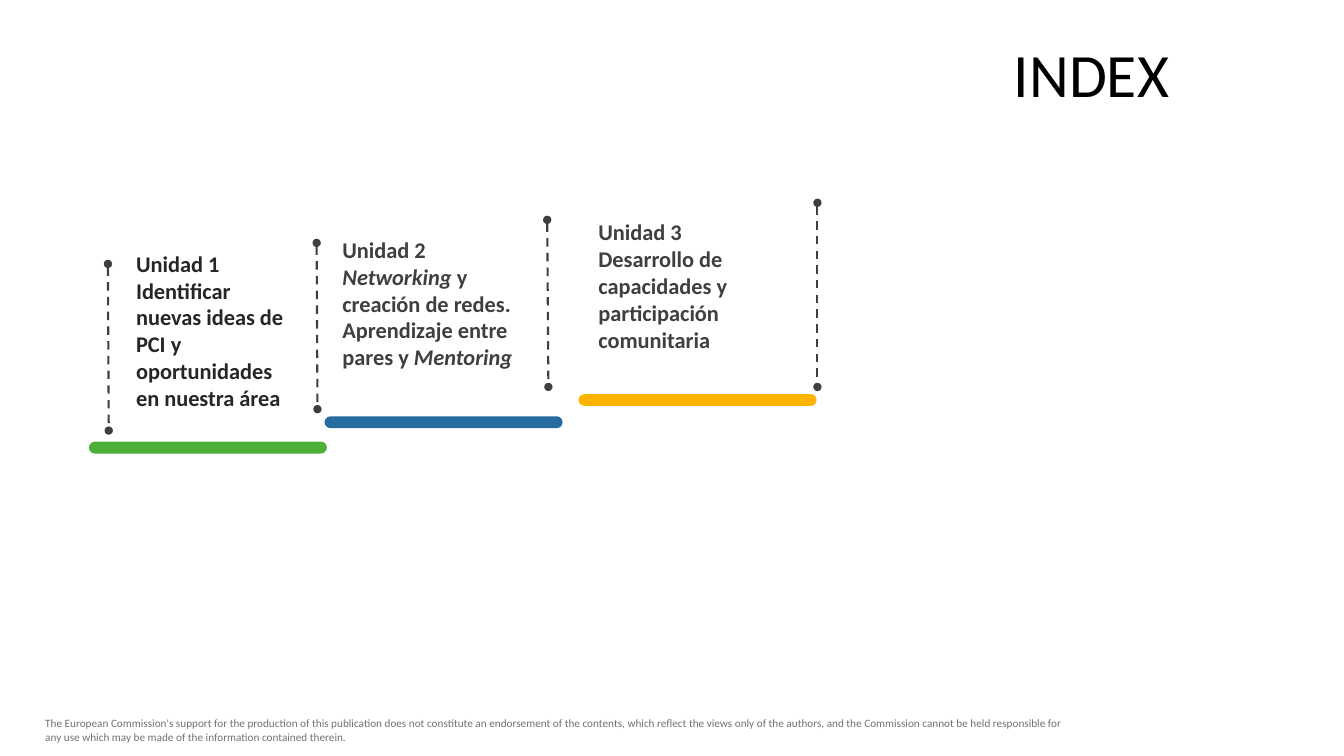
"""Builds the index slide with its three rising course units."""
from lxml.etree import SubElement
from pptx import Presentation
from pptx.dml.color import RGBColor
from pptx.enum.dml import MSO_LINE
from pptx.enum.shapes import MSO_CONNECTOR, MSO_SHAPE
from pptx.enum.text import MSO_ANCHOR, MSO_AUTO_SIZE, PP_ALIGN
from pptx.oxml.ns import qn
from pptx.util import Cm, Pt

BLACK = RGBColor(0x00, 0x00, 0x00)
INK = RGBColor(0x26, 0x26, 0x26)
CHARCOAL = RGBColor(0x3F, 0x3F, 0x3F)
GRAY = RGBColor(0x75, 0x70, 0x70)
GREEN = RGBColor(0x4E, 0xAE, 0x3A)
BLUE = RGBColor(0x26, 0x6C, 0x9F)
YELLOW = RGBColor(0xFF, 0xB5, 0x00)

DISCLAIMER = (
    "The European Commission's support for the production of this publication "
    "does not constitute an endorsement of the contents, which reflect the views "
    "only of the authors, and the Commission cannot be held responsible for any "
    "use which may be made of the information contained therein."
)

UNITS = [
    ("Unidad 1",
     [("Identificar nuevas ideas de PCI y oportunidades en nuestra área", False)],
     INK, (3.18, 6.17, 4.34, 4.37), 0.25, GREEN, (2.24, 11.13)),
    ("Unidad 2",
     [("Networking", True),
      (" y creación de redes. Aprendizaje entre pares y ", False),
      ("Mentoring", True)],
     CHARCOAL, (8.33, 5.82, 4.95, 3.68), 0.3, BLUE, (8.18, 10.49)),
    ("Unidad 3",
     [("Desarrollo de capacidades y participación comunitaria", False)],
     CHARCOAL, (14.78, 5.38, 5, 3.68), 0.3, YELLOW, (14.58, 9.93)),
]

DIVIDERS = [
    (2.72, 6.65, 2.74, 10.85),
    (7.98, 6.12, 8, 10.31),
    (13.79, 5.54, 13.82, 9.75),
    (20.6, 5.11, 20.6, 9.75),
]


class IndexSlide:
    """Holds the text style and the slide, and draws each kind of element."""

    font_name = "Calibri"

    def __init__(self, deck):
        self.slide = deck.slides.add_slide(deck.slide_layouts[5])
        self.shapes = self.slide.shapes

    def style(self, paragraph, size, color, bold=False):
        font = paragraph.font
        font.name, font.size, font.bold = self.font_name, Pt(size), bold
        font.color.rgb = color

    def title(self, text, box):
        heading = self.shapes.title
        heading.left, heading.top, heading.width, heading.height = map(Cm, box)
        frame = heading.text_frame
        frame.text = text
        frame.auto_size = MSO_AUTO_SIZE.NONE
        frame.vertical_anchor = MSO_ANCHOR.MIDDLE
        paragraph = frame.paragraphs[0]
        paragraph.alignment = PP_ALIGN.RIGHT
        paragraph.line_spacing = 0.9
        self.style(paragraph, 44, BLACK)

    def text(self, paragraphs, box, size, color, bold=False, inset=0.25):
        frame = self.shapes.add_textbox(*map(Cm, box)).text_frame
        frame.word_wrap = True
        frame.margin_left = frame.margin_right = Cm(inset)
        for index, pieces in enumerate(paragraphs):
            paragraph = frame.add_paragraph() if index else frame.paragraphs[0]
            self.style(paragraph, size, color, bold)
            for words, italic in pieces:
                run = paragraph.add_run()
                run.text = words
                run.font.italic = italic

    def bar(self, left, top, color):
        bar = self.shapes.add_shape(
            MSO_SHAPE.ROUNDED_RECTANGLE, Cm(left), Cm(top), Cm(6), Cm(0.3))
        bar.adjustments[0] = 0.5
        bar.shadow.inherit = False
        bar.fill.solid()
        bar.fill.fore_color.rgb = color
        bar.line.fill.background()

    def divider(self, ends):
        divider = self.shapes.add_connector(MSO_CONNECTOR.STRAIGHT, *map(Cm, ends))
        line = divider.line
        line.color.rgb = CHARCOAL
        line.width = Pt(1.5)
        line.dash_style = MSO_LINE.DASH
        properties = divider._element.spPr
        outline = properties.find(qn("a:ln"))
        for end in ("a:headEnd", "a:tailEnd"):
            SubElement(outline, qn(end), type="oval")
        SubElement(properties, qn("a:effectLst"))


def main():
    deck = Presentation()
    deck.slide_width, deck.slide_height = Cm(33.87), Cm(19.05)
    index = IndexSlide(deck)
    index.text([[(DISCLAIMER, False)]], (0.89, 17.93, 26.57, 0.94), 8, GRAY)
    index.title("INDEX", (7.85, 0.94, 21.87, 2.01))
    for name, topic, ink, box, inset, color, corner in UNITS:
        index.bar(*corner, color)
        index.text([[(name, False)], topic], box, 16, ink, True, inset)
    for ends in DIVIDERS:
        index.divider(ends)
    deck.save("out.pptx")


if __name__ == "__main__":
    main()
